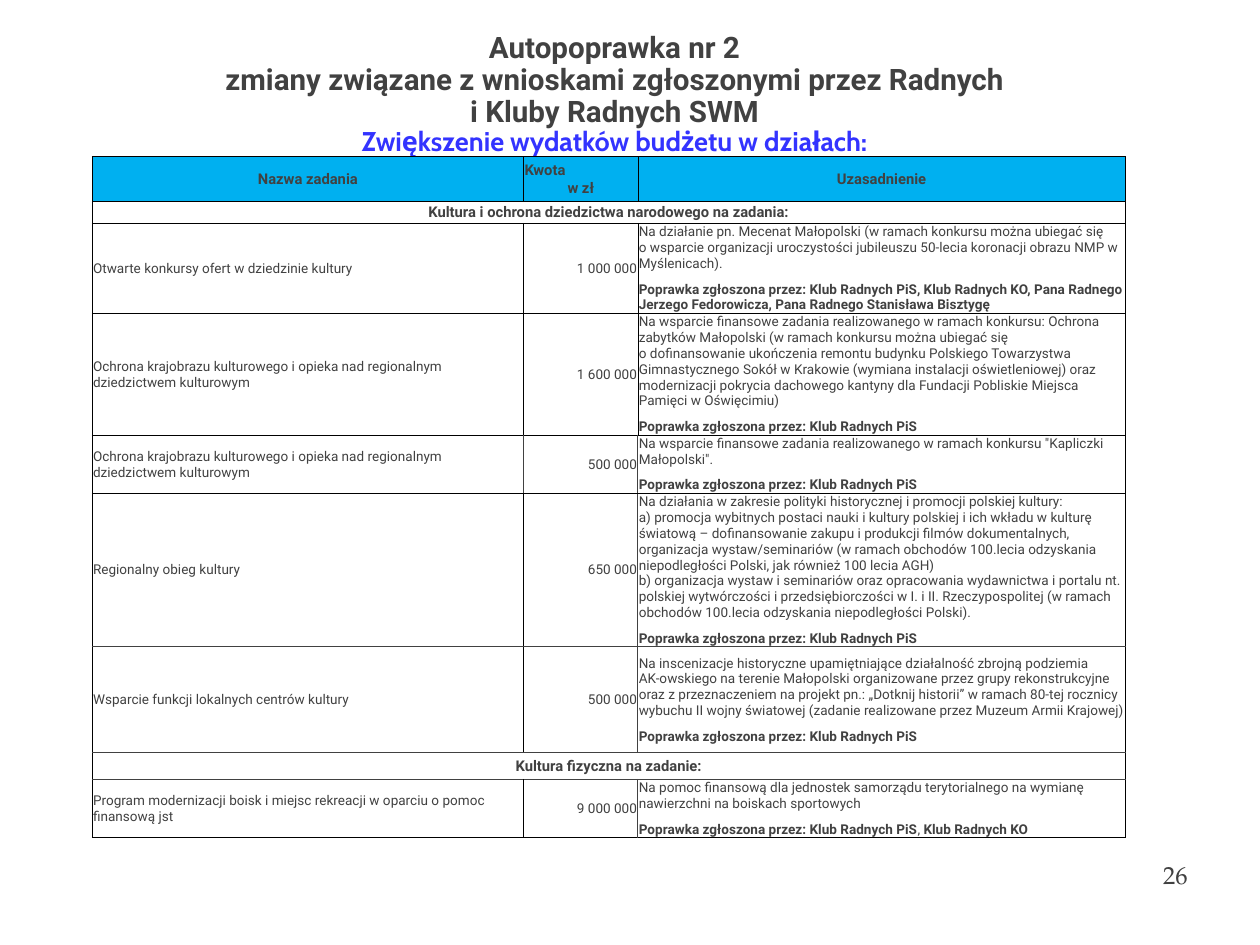
"""Build the slide on budget changes requested by councillors."""
import pptx
import pptx.util
import pptx.dml.color
import pptx.enum.text
import pptx.oxml
import pptx.oxml.ns
from lxml import etree

TITLE = [
    "Autopoprawka nr 2",
    "zmiany związane z wnioskami zgłoszonymi przez Radnych",
    "i Kluby Radnych SWM",
    "Zwiększenie wydatków budżetu w działach:",
]
PAGE = "26"
BY = "Poprawka zgłoszona przez: Klub Radnych PiS"
HEAD = (["Nazwa zadania"], ["Kwota", "w zł"], ["Uzasadnienie"])
ROWS = [
    ("Kultura i ochrona dziedzictwa narodowego na zadania:",),
    ("Otwarte konkursy ofert w dziedzinie kultury", "1 000 000", [
        "Na działanie pn. Mecenat Małopolski (w ramach konkursu można ubiegać się",
        "o wsparcie organizacji uroczystości jubileuszu 50-lecia koronacji obrazu NMP w Myślenicach).",
        BY + ", Klub Radnych KO, Pana Radnego Jerzego Fedorowicza, Pana Radnego Stanisława Bisztygę"]),
    ("Ochrona krajobrazu kulturowego i opieka nad regionalnym dziedzictwem kulturowym", "1 600 000", [
        "Na wsparcie finansowe zadania realizowanego w ramach konkursu: Ochrona zabytków Małopolski "
        "(w ramach konkursu można ubiegać się",
        "o dofinansowanie ukończenia remontu budynku Polskiego Towarzystwa Gimnastycznego Sokół "
        "w Krakowie (wymiana instalacji oświetleniowej) oraz modernizacji pokrycia dachowego kantyny "
        "dla Fundacji Pobliskie Miejsca Pamięci w Oświęcimiu)",
        BY]),
    ("Ochrona krajobrazu kulturowego i opieka nad regionalnym dziedzictwem kulturowym", "500 000", [
        'Na wsparcie finansowe zadania realizowanego w ramach konkursu "Kapliczki Małopolski".',
        BY]),
    ("Regionalny obieg kultury", "650 000", [
        "Na działania w zakresie polityki historycznej i promocji polskiej kultury:",
        "a) promocja wybitnych postaci nauki i kultury polskiej i ich wkładu w kulturę światową – "
        "dofinansowanie zakupu i produkcji filmów dokumentalnych, organizacja wystaw/seminariów "
        "(w ramach obchodów 100.lecia odzyskania niepodległości Polski, jak również 100 lecia AGH)",
        "b) organizacja wystaw i seminariów oraz opracowania wydawnictwa i portalu nt. polskiej "
        "wytwórczości i przedsiębiorczości w I. i II. Rzeczypospolitej (w ramach obchodów 100.lecia "
        "odzyskania niepodległości Polski).",
        BY]),
    ("Wsparcie funkcji lokalnych centrów kultury", "500 000", [
        "Na inscenizacje historyczne upamiętniające działalność zbrojną podziemia",
        "AK-owskiego na terenie Małopolski organizowane przez grupy rekonstrukcyjne oraz "
        "z przeznaczeniem na projekt pn.: „Dotknij historii” w ramach 80-tej rocznicy wybuchu "
        "II wojny światowej (zadanie realizowane przez Muzeum Armii Krajowej)",
        BY]),
    ("Kultura fizyczna na zadanie:",),
    ("Program modernizacji boisk i miejsc rekreacji w oparciu o pomoc finansową jst", "9 000 000", [
        "Na pomoc finansową dla jednostek samorządu terytorialnego na wymianę nawierzchni "
        "na boiskach sportowych",
        BY + "|, |Klub Radnych KO"]),
]
COLS = (4.87, 1.29, 5.5)
HIGH = (0.5, 0.25, 1.02, 1.36, 0.66, 1.73, 1.2, 0.3, 0.66)
THICK_H = {6, 7, 8}
THICK_V = {(4, 1), (4, 2), (5, 2), (6, 2), (8, 2)}
INK = {"text": "414141", "line": "000000", "head": "00B0F0", "sub": "3333FF"}
FONT = "Roboto"

Inches, Pt = pptx.util.Inches, pptx.util.Pt
ALIGN = pptx.enum.text.PP_ALIGN
MID = pptx.enum.text.MSO_ANCHOR.MIDDLE


def color(name):
    return pptx.dml.color.RGBColor.from_string(INK[name])


def style(run, size, bold=False, face=FONT, ink="text"):
    run.font.size = Pt(size)
    run.font.bold = bold
    run.font.name = face
    run.font.color.rgb = color(ink)


def inset(frame, gap):
    frame.margin_left = frame.margin_right = Inches(gap)
    frame.margin_top = frame.margin_bottom = Inches(gap)
    frame.vertical_anchor = MID
    frame.word_wrap = True


def write(cell, lines, size, align, bold=False, note=False):
    """Fill a cell; with note, the last line is bold and set apart."""
    frame = cell.text_frame
    for i, line in enumerate(lines):
        para = frame.paragraphs[0] if i == 0 else frame.add_paragraph()
        para.alignment = align
        last = note and i == len(lines) - 1
        if last:
            para.space_before = Pt(8)
        for j, part in enumerate(line.split("|")):
            run = para.add_run()
            run.text = part
            style(run, size, bold or (last and j % 2 == 0))


def border(cell, row, col):
    edges = {"lnL": (row, col) in THICK_V, "lnR": (row, col + 1) in THICK_V,
             "lnT": row in THICK_H, "lnB": row + 1 in THICK_H}
    props = cell._tc.get_or_add_tcPr()
    qn = pptx.oxml.ns.qn
    for tag, thick in edges.items():
        line = etree.SubElement(props, qn("a:" + tag), w=str(Pt(1 if thick else 0.5)))
        fill = etree.SubElement(line, qn("a:solidFill"))
        etree.SubElement(fill, qn("a:srgbClr"), val=INK["text" if thick else "line"])


def add_title(slide):
    box = slide.shapes.title
    box.left, box.top, box.width, box.height = map(Inches, (0.38, 0.41, 13.11, 1.33))
    frame = box.text_frame
    inset(frame, 0)
    frame.auto_size = pptx.enum.text.MSO_AUTO_SIZE.NONE
    frame.text = "\n".join(TITLE)
    for para in frame.paragraphs:
        para.alignment = ALIGN.CENTER
        para.line_spacing = 0.9
        para.space_before = Pt(0)
        style(para.runs[0], 24, True)
    style(frame.paragraphs[-1].runs[0], 22, True, "Cabin", "sub")


def add_grid(slide):
    area = map(Inches, (1.04, 1.77, sum(COLS), sum(HIGH)))
    grid = slide.shapes.add_table(len(HIGH), len(COLS), *area).table
    grid.first_row = grid.horz_banding = False
    for col, wide in zip(grid.columns, COLS):
        col.width = Inches(wide)
    for row, high in zip(grid.rows, HIGH):
        row.height = Inches(high)
    for r in range(len(HIGH)):
        for c in range(len(COLS)):
            cell = grid.cell(r, c)
            cell.margin_left = cell.margin_right = cell.margin_top = Inches(0.01)
            cell.margin_bottom = 0
            cell.vertical_anchor = MID
            border(cell, r, c)
            if r == 0:
                cell.fill.solid()
                cell.fill.fore_color.rgb = color("head")
                write(cell, HEAD[c], 12, ALIGN.CENTER, True)
            else:
                cell.fill.background()
    grid.cell(0, 1).text_frame.paragraphs[0].alignment = ALIGN.LEFT
    for r, data in enumerate(ROWS, 1):
        first = grid.cell(r, 0)
        if len(data) == 1:
            first.merge(grid.cell(r, len(COLS) - 1))
            write(first, data, 12, ALIGN.CENTER, True)
            continue
        task, sum_, why = data
        write(first, [task], 11, ALIGN.LEFT)
        write(grid.cell(r, 1), [sum_], 11, ALIGN.RIGHT)
        write(grid.cell(r, 2), why, 11, ALIGN.LEFT, note=True)


def add_page(slide):
    box = slide.shapes.add_textbox(*map(Inches, (12.86, 9.65, 0.81, 0.45)))
    inset(box.text_frame, 0.06)
    box.text_frame.text = PAGE
    para = box.text_frame.paragraphs[0]
    para.alignment = ALIGN.CENTER
    style(para.runs[0], 20, face="TeX Gyre Pagella")


def main():
    deck = pptx.Presentation()
    deck.slide_width, deck.slide_height = Inches(14.22), Inches(10.67)
    slide = deck.slides.add_slide(deck.slide_layouts[5])
    add_title(slide)
    add_grid(slide)
    add_page(slide)
    deck.save("out.pptx")


if __name__ == "__main__":
    main()
